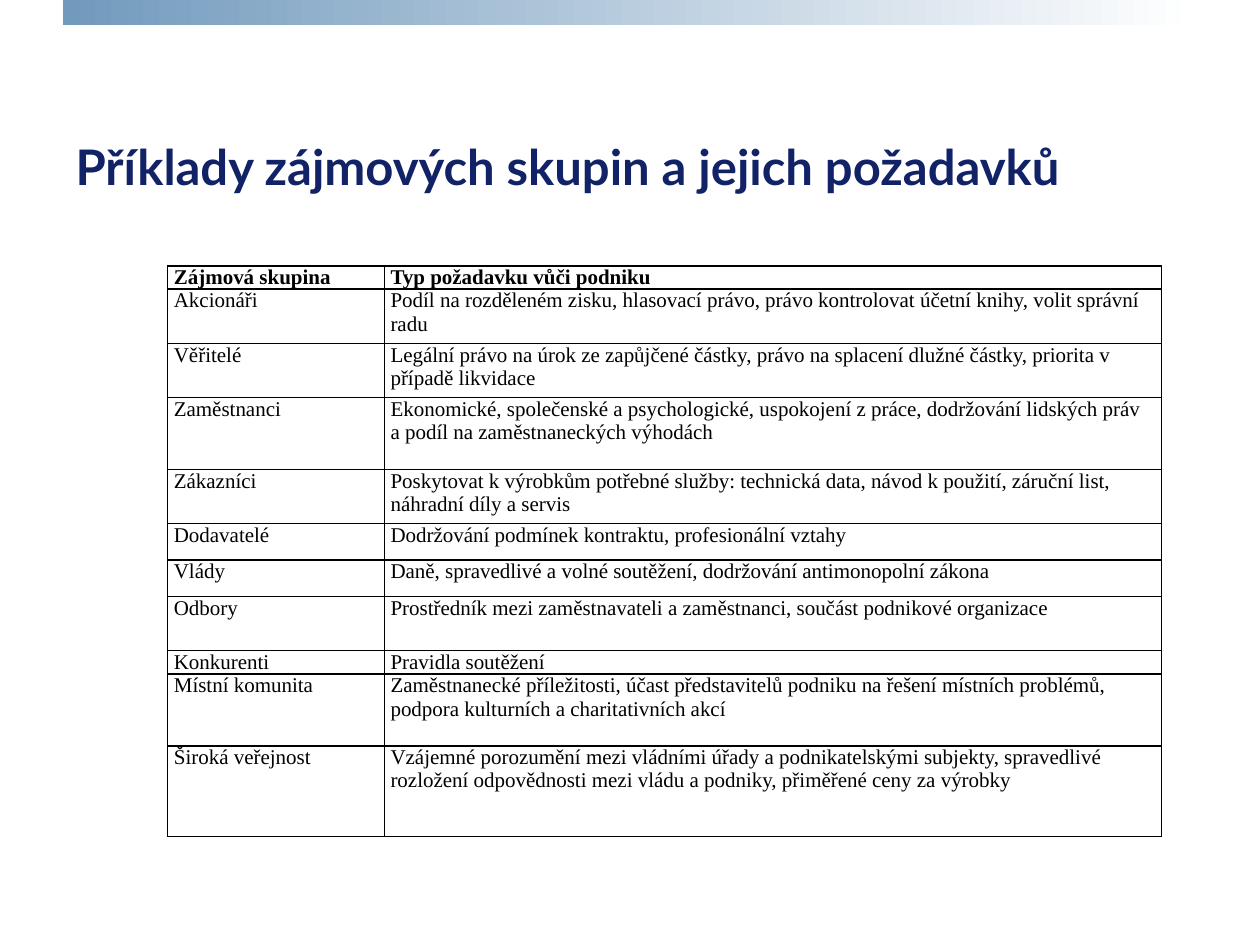
from lxml import etree
from pptx import Presentation
from pptx.dml.color import RGBColor
from pptx.enum.shapes import MSO_SHAPE
from pptx.enum.text import MSO_ANCHOR, PP_ALIGN
from pptx.oxml.ns import qn
from pptx.util import Inches, Pt

RECT = MSO_SHAPE.RECTANGLE
LEFT = PP_ALIGN.LEFT
MIDDLE = MSO_ANCHOR.MIDDLE
NAVY = RGBColor(0x11, 0x22, 0x66)
BLUE = RGBColor(0x72, 0x9A, 0xBD)
WHITE = RGBColor(0xFF, 0xFF, 0xFF)
BLACK = RGBColor(0, 0, 0)

COLS = [1.72, 6.17]
ROWS = [
    (0.18, "Zájmová skupina", "Typ požadavku vůči podniku"),
    (0.43, "Akcionáři", "Podíl na rozděleném zisku, hlasovací právo, právo "
     "kontrolovat účetní knihy, volit správní radu"),
    (0.43, "Věřitelé", "Legální právo na úrok ze zapůjčené částky, právo na "
     "splacení dlužné částky, priorita v případě likvidace"),
    (0.57, "Zaměstnanci", "Ekonomické, společenské a psychologické, uspokojení "
     "z práce, dodržování lidských práv a podíl na zaměstnaneckých výhodách"),
    (0.43, "Zákazníci", "Poskytovat k výrobkům potřebné služby: technická data, "
     "návod k použití, záruční list, náhradní díly a servis"),
    (0.29, "Dodavatelé", "Dodržování podmínek kontraktu, profesionální vztahy"),
    (0.29, "Vlády", "Daně, spravedlivé a volné soutěžení, dodržování "
     "antimonopolní zákona"),
    (0.43, "Odbory", "Prostředník mezi zaměstnavateli a zaměstnanci, součást "
     "podnikové organizace"),
    (0.18, "Konkurenti", "Pravidla soutěžení"),
    (0.57, "Místní komunita", "Zaměstnanecké příležitosti, účast představitelů "
     "podniku na řešení místních problémů, podpora kulturních a charitativních akcí"),
    (0.72, "Široká veřejnost", "Vzájemné porozumění mezi vládními úřady a "
     "podnikatelskými subjekty, spravedlivé rozložení odpovědnosti mezi vládu a "
     "podniky, přiměřené ceny za výrobky"),
]


class Deck:
    """Hold the style and the current slide."""

    def __init__(self):
        self.prs = Presentation()
        self.prs.slide_width = Inches(10)
        self.prs.slide_height = Inches(7.5)
        self.slide = self.prs.slides.add_slide(self.prs.slide_layouts[5])

    def style(self, para, face, size, color, bold):
        para.alignment = LEFT
        for run in para.runs:
            font = run.font
            font.name, font.size, font.bold = face, Pt(size), bold
            font.color.rgb = color

    def band(self, x, y, w, h):
        band = self.slide.shapes.add_shape(
            RECT, Inches(x), Inches(y), Inches(w), Inches(h))
        band.shadow.inherit = False
        band.line.fill.background()
        band.fill.gradient()
        band.fill.gradient_angle = 0
        stops = band.fill.gradient_stops
        for stop, color, pos in zip(stops, (BLUE, WHITE), (0, 1)):
            stop.color.rgb = color
            stop.position = pos

    def title(self, text, x, y, w, h):
        title = self.slide.shapes.title
        title.left, title.top = Inches(x), Inches(y)
        title.width, title.height = Inches(w), Inches(h)
        frame = title.text_frame
        frame.text = text
        frame.vertical_anchor = MIDDLE
        self.style(frame.paragraphs[0], "Lato", 28, NAVY, True)

    def border(self, cell):
        props = cell._tc.get_or_add_tcPr()
        for i, side in enumerate(("a:lnL", "a:lnR", "a:lnT", "a:lnB")):
            line = etree.Element(qn(side), w=str(Pt(1)))
            fill = etree.SubElement(line, qn("a:solidFill"))
            etree.SubElement(fill, qn("a:srgbClr"), val=str(BLACK))
            props.insert(i, line)

    def cell(self, cell, text, bold):
        cell.margin_left = cell.margin_right = Inches(0.05)
        cell.margin_top = cell.margin_bottom = 0
        cell.fill.background()
        cell.text_frame.text = text
        self.style(cell.text_frame.paragraphs[0],
                   "Times New Roman", 12, BLACK, bold)
        self.border(cell)

    def table(self, x, y, cols, rows):
        high = sum(row[0] for row in rows)
        table = self.slide.shapes.add_table(
            len(rows), len(cols), Inches(x), Inches(y),
            Inches(sum(cols)), Inches(high)).table
        table.first_row = table.horz_banding = False
        for col, width in zip(table.columns, cols):
            col.width = Inches(width)
        for r, (height, *texts) in enumerate(rows):
            table.rows[r].height = Inches(height)
            for c, text in enumerate(texts):
                self.cell(table.cell(r, c), text, r == 0)


def main():
    deck = Deck()
    deck.band(0.5, 0, 9, 0.2)
    deck.title("Příklady zájmových skupin a jejich požadavků", 0.5, 0.92, 9, 0.8)
    deck.table(1.33, 2.11, COLS, ROWS)
    deck.prs.save("out.pptx")


if __name__ == "__main__":
    main()
